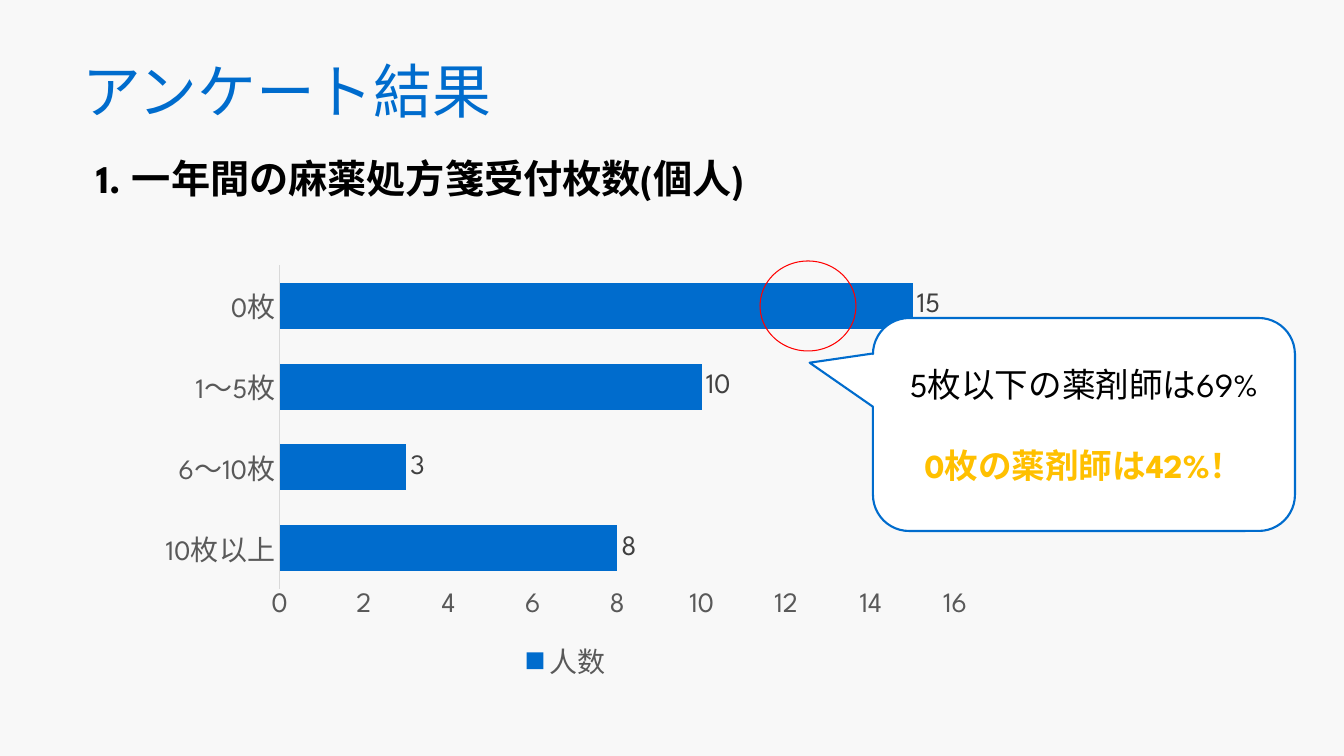
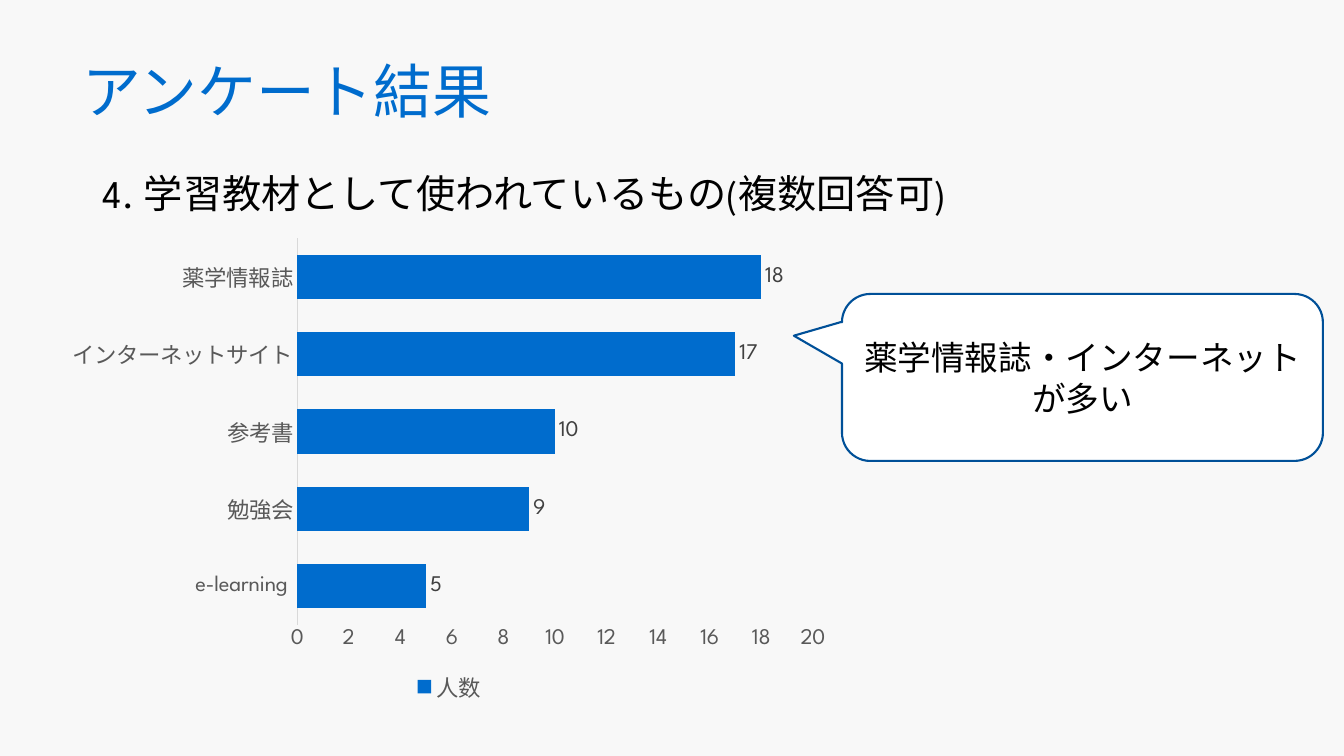
from dataclasses import dataclass

import lxml.etree
import pptx
import pptx.chart.data
import pptx.dml.color
import pptx.enum.chart
import pptx.enum.shapes
import pptx.enum.text
import pptx.oxml.ns
import pptx.util

EMU_PER_PX = 914400 / 100.8
FONT = "League Spartan"
COLORS = {
    "background": "F8F8F8",
    "blue": "006CCD",
    "navy": "005098",
    "black": "000000",
    "white": "FFFFFF",
    "gold": "FFC000",
    "red": "FF0000",
    "axis_text": "595959",
    "label_text": "404040",
    "axis_line": "D9D9D9",
}


@dataclass(frozen=True)
class Area:
    left: int
    top: int
    width: int
    height: int

    def emu(self) -> tuple:
        return tuple(px(value) for value in (self.left, self.top, self.width, self.height))


@dataclass(frozen=True)
class Line:
    text: str
    size: int
    color: str = "black"
    bold: bool = False
    space_before: int = 0


@dataclass(frozen=True)
class Survey:
    area: Area
    counts: dict
    axis_maximum: int
    size: int


@dataclass(frozen=True)
class Callout:
    area: Area
    pointer: tuple
    outline: str
    lines: tuple


@dataclass(frozen=True)
class Result:
    heading_area: Area
    heading: Line
    survey: Survey
    callout: Callout
    highlight: Area | None = None


TITLE_AREA = Area(72, 50, 1037, 154)
TITLE = Line("アンケート結果", 42, "blue")

RESULTS = (
    Result(
        Area(87, 149, 1128, 57),
        Line("1. 一年間の麻薬処方箋受付枚数(個人)", 28, bold=True),
        Survey(
            Area(149, 257, 835, 430),
            {"10枚以上": 8, "6〜10枚": 3, "1〜5枚": 10, "0枚": 15},
            axis_maximum=16,
            size=20,
        ),
        Callout(
            Area(873, 318, 422, 213),
            (-0.65, -0.29),
            "blue",
            (
                Line("5枚以下の薬剤師は69%", 24),
                Line("0枚の薬剤師は42%！", 24, "gold", bold=True, space_before=29),
            ),
        ),
        highlight=Area(760, 261, 96, 90),
    ),
    Result(
        Area(93, 164, 917, 57),
        Line("4. 学習教材として使われているもの(複数回答可)", 28),
        Survey(
            Area(57, 229, 784, 478),
            {
                "e-learning ": 5,
                "勉強会": 9,
                "参考書": 10,
                "インターネットサイト": 17,
                "薬学情報誌": 18,
            },
            axis_maximum=20,
            size=16,
        ),
        Callout(
            Area(842, 294, 481, 167),
            (-0.6, -0.25),
            "navy",
            (Line("薬学情報誌・インターネットが多い", 24),),
        ),
    ),
)


def px(value: int) -> int:
    return round(value * EMU_PER_PX)


def rgb(name: str) -> pptx.dml.color.RGBColor:
    return pptx.dml.color.RGBColor.from_string(COLORS[name])


def style_font(font, size: int, color: str, bold: bool = False) -> None:
    font.name = FONT
    font.size = pptx.util.Pt(size)
    font.bold = bold
    font.color.rgb = rgb(color)


def write_lines(frame, lines: tuple, alignment) -> None:
    frame.word_wrap = True
    for index, line in enumerate(lines):
        para = frame.add_paragraph() if index else frame.paragraphs[0]
        para.alignment = alignment
        para.space_before = pptx.util.Pt(line.space_before)
        span = para.add_run()
        span.text = line.text
        style_font(span.font, line.size, line.color, line.bold)
        east_asian = lxml.etree.SubElement(
            span._r.get_or_add_rPr(), pptx.oxml.ns.qn("a:ea")
        )
        east_asian.set("typeface", FONT)


def add_title(page) -> None:
    title = page.shapes.title
    title.left, title.top, title.width, title.height = TITLE_AREA.emu()
    title.text_frame.vertical_anchor = pptx.enum.text.MSO_ANCHOR.TOP
    write_lines(title.text_frame, (TITLE,), pptx.enum.text.PP_ALIGN.LEFT)


def add_heading(page, area: Area, heading: Line) -> None:
    box = page.shapes.add_textbox(*area.emu())
    write_lines(box.text_frame, (heading,), pptx.enum.text.PP_ALIGN.LEFT)
    box.text_frame.auto_size = pptx.enum.text.MSO_AUTO_SIZE.SHAPE_TO_FIT_TEXT


def add_survey_chart(page, survey: Survey) -> None:
    data = pptx.chart.data.CategoryChartData()
    data.categories = list(survey.counts)
    data.add_series("人数", list(survey.counts.values()))
    chart = page.shapes.add_chart(
        pptx.enum.chart.XL_CHART_TYPE.BAR_CLUSTERED, *survey.area.emu(), data
    ).chart
    chart.has_title = False
    style_font(chart.font, survey.size, "black")

    chart.has_legend = True
    chart.legend.position = pptx.enum.chart.XL_LEGEND_POSITION.BOTTOM
    chart.legend.include_in_layout = False
    style_font(chart.legend.font, survey.size, "axis_text")

    for axis in (chart.category_axis, chart.value_axis):
        axis.has_major_gridlines = False
        axis.major_tick_mark = pptx.enum.chart.XL_TICK_MARK.NONE
        axis.minor_tick_mark = pptx.enum.chart.XL_TICK_MARK.NONE
        style_font(axis.tick_labels.font, survey.size, "axis_text")
    chart.category_axis.format.line.color.rgb = rgb("axis_line")
    chart.category_axis.format.line.width = pptx.util.Pt(0.75)
    chart.value_axis.format.line.fill.background()
    chart.value_axis.minimum_scale = 0
    chart.value_axis.maximum_scale = survey.axis_maximum
    chart.value_axis.major_unit = 2

    plot = chart.plots[0]
    plot.gap_width = 75
    plot.vary_by_categories = False
    bars = plot.series[0]
    bars.format.fill.solid()
    bars.format.fill.fore_color.rgb = rgb("blue")
    labels = bars.data_labels
    labels.show_value = True
    labels.position = pptx.enum.chart.XL_LABEL_POSITION.OUTSIDE_END
    style_font(labels.font, survey.size, "label_text")


def add_outlined_shape(page, kind, area: Area, outline: str, width: float):
    shape = page.shapes.add_shape(kind, *area.emu())
    shape.shadow.inherit = False
    shape.line.color.rgb = rgb(outline)
    shape.line.width = pptx.util.Pt(width)
    return shape


def add_callout(page, callout: Callout) -> None:
    kind = pptx.enum.shapes.MSO_SHAPE.ROUNDED_RECTANGULAR_CALLOUT
    bubble = add_outlined_shape(page, kind, callout.area, callout.outline, 1.5)
    bubble.fill.solid()
    bubble.fill.fore_color.rgb = rgb("white")
    for index, value in enumerate((*callout.pointer, 0.17)):
        bubble.adjustments[index] = value
    bubble.text_frame.vertical_anchor = pptx.enum.text.MSO_ANCHOR.MIDDLE
    write_lines(bubble.text_frame, callout.lines, pptx.enum.text.PP_ALIGN.CENTER)


def add_result(deck, result: Result) -> None:
    page = deck.slides.add_slide(deck.slide_layouts.get_by_name("Title Only"))
    add_title(page)
    add_heading(page, result.heading_area, result.heading)
    add_survey_chart(page, result.survey)
    add_callout(page, result.callout)
    if result.highlight:
        kind = pptx.enum.shapes.MSO_SHAPE.OVAL
        ring = add_outlined_shape(page, kind, result.highlight, "red", 0.75)
        ring.fill.background()


def main() -> None:
    deck = pptx.Presentation()
    deck.slide_width, deck.slide_height = px(1344), px(756)
    backdrop = deck.slide_master.background.fill
    backdrop.solid()
    backdrop.fore_color.rgb = rgb("background")
    for result in RESULTS:
        add_result(deck, result)
    deck.save("out.pptx")


if __name__ == "__main__":
    main()
